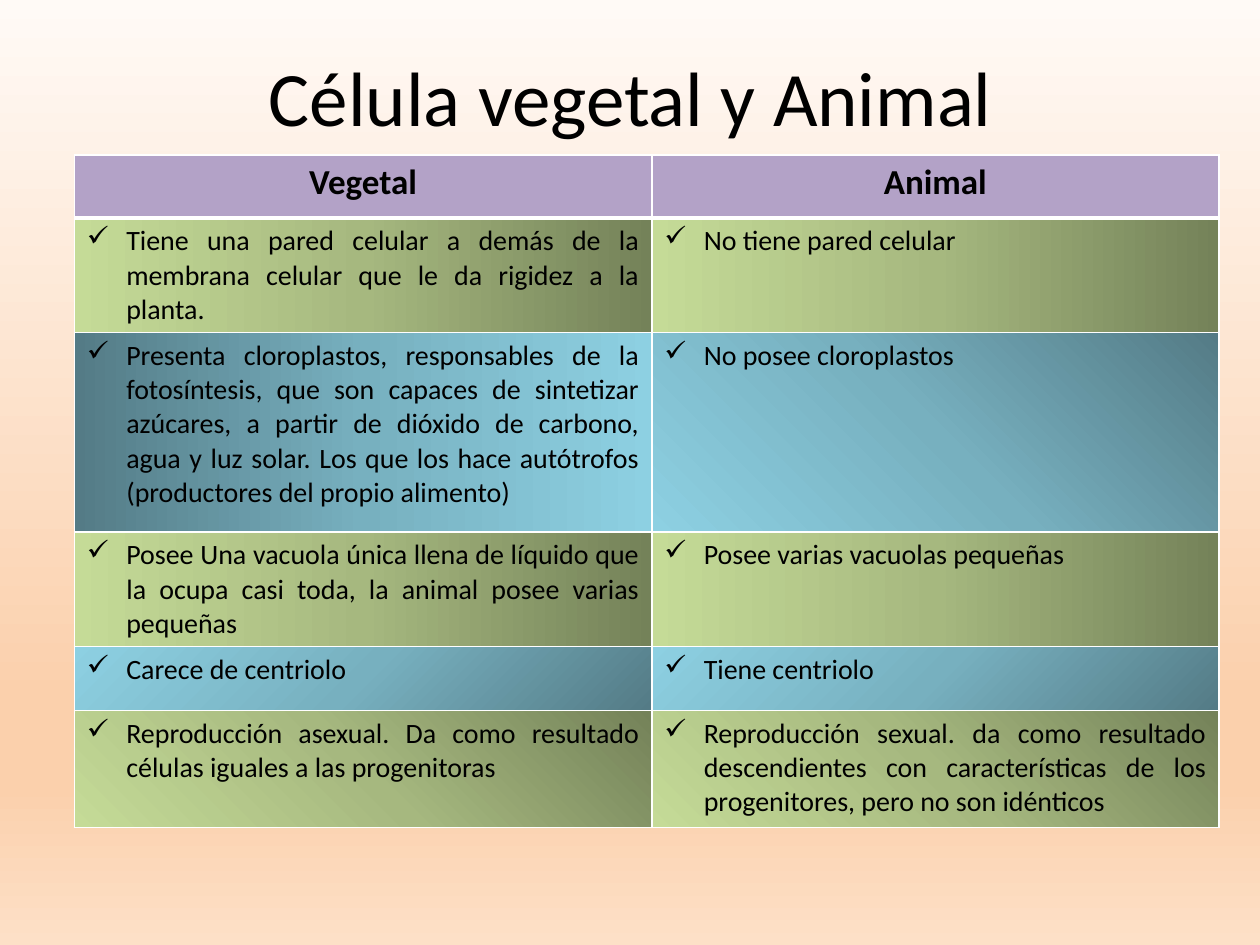
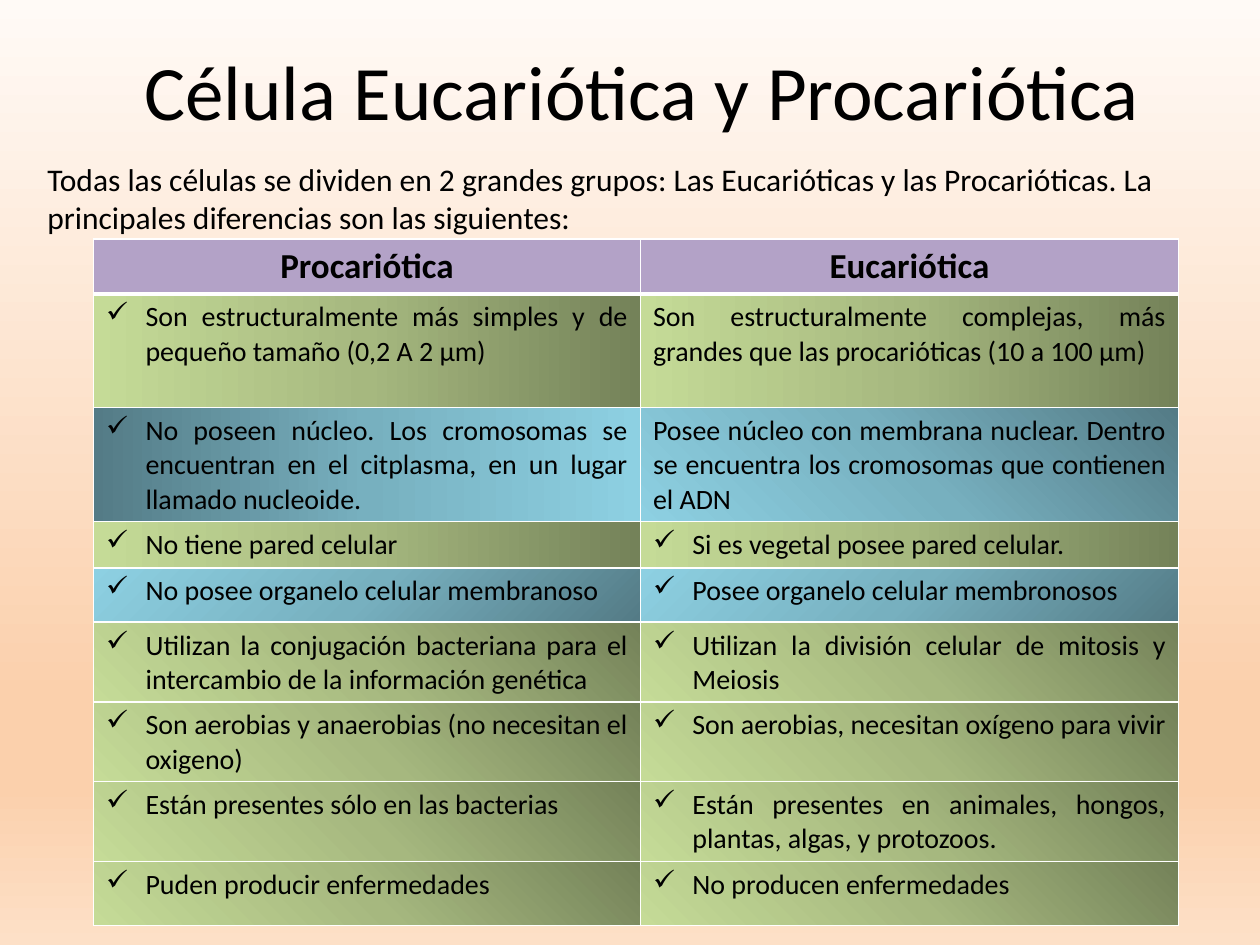
from lxml import etree
from pptx import Presentation
from pptx.dml.color import RGBColor
from pptx.enum.text import MSO_ANCHOR, PP_ALIGN
from pptx.oxml.ns import nsdecls, qn
from pptx.util import Pt

CENTER, JUSTIFY, LEFT = PP_ALIGN.CENTER, PP_ALIGN.JUSTIFY, PP_ALIGN.LEFT
TOP, MIDDLE = MSO_ANCHOR.TOP, MSO_ANCHOR.MIDDLE

BLACK = RGBColor(0x00, 0x00, 0x00)
WHITE = RGBColor(0xFF, 0xFF, 0xFF)
LILAC = RGBColor(0xB3, 0xA2, 0xC7)
CREAM = RGBColor(0xFF, 0xFA, 0xF6)
PEACH = RGBColor(0xFB, 0xD0, 0xAC)
SAND = RGBColor(0xFD, 0xE0, 0xC7)
GREENS = [(0, RGBColor(0x74, 0x82, 0x59)), (50, RGBColor(0xA6, 0xB8, 0x7F)),
          (100, RGBColor(0xC5, 0xDB, 0x97))]
BLUES = [(0, RGBColor(0x54, 0x7B, 0x86)), (50, RGBColor(0x77, 0xB0, 0xBF)),
         (100, RGBColor(0x8D, 0xD0, 0xE2))]
BACK = [(0, CREAM), (74, PEACH), (83, PEACH), (100, SAND)]

# A shade is its stops and either an angle or the corner the circle starts from.
GREEN = (GREENS, 180)
GREEN_ARC = (GREENS, "lb")
BLUE = (BLUES, 0)
BLUE_SLANT = (BLUES, 135)
BLUE_ARC = (BLUES, "lt")

TITLE = {"size": Pt(44), "bold": False}
INTRO = {"size": Pt(18), "bold": False}
HEAD = {"size": Pt(20), "bold": True}
BODY = {"size": Pt(16), "bold": False}
MARK = "✓"
INDENT = Pt(22.5)

# Each row: height, shade of each cell, text of each cell.
SLIDES = [
    {
        "title": ("Célula vegetal y Animal", (36.5, 9.5, 648, 90)),
        "table": (42.5, 88.5),
        "cols": (330, 324),
        "head": (36, ("Vegetal", "Animal")),
        "rows": [
            (65.5, (GREEN, GREEN), (
                "✓Tiene una pared celular a demás de la membrana celular "
                "que le da rigidez a la planta.",
                "✓No tiene pared celular")),
            (114, (BLUE, BLUE_SLANT), (
                "✓Presenta cloroplastos, responsables de la fotosíntesis, "
                "que son capaces de sintetizar azúcares, a partir de dióxido "
                "de carbono, agua y luz solar. Los que los hace autótrofos "
                "(productores del propio alimento)",
                "✓No posee cloroplastos")),
            (65.5, (GREEN, GREEN), (
                "✓Posee Una vacuola única llena de líquido que la ocupa casi "
                "toda, la animal posee varias pequeñas",
                "✓Posee varias vacuolas pequeñas")),
            (36.5, (BLUE_ARC, BLUE_ARC), (
                "✓Carece de centriolo",
                "✓Tiene centriolo")),
            (67, (GREEN_ARC, GREEN_ARC), (
                "✓Reproducción asexual. Da como resultado células iguales a "
                "las progenitoras",
                "✓Reproducción sexual. da como resultado descendientes con "
                "características de los progenitores, pero no son idénticos")),
        ],
    },
    {
        "title": ("Célula Eucariótica y Procariótica", (61, 15, 612, 73)),
        "intro": ("Todas las células se dividen en 2 grandes grupos: Las "
                  "Eucarióticas y las Procarióticas. La principales "
                  "diferencias son las siguientes:", (20, 88, 695, 51)),
        "table": (53.5, 136.5),
        "cols": (312.5, 307.5),
        "head": (31.5, ("Procariótica", "Eucariótica")),
        "rows": [
            (65, (GREEN, GREEN), (
                "✓Son estructuralmente más simples y de pequeño tamaño "
                "(0,2 A 2 µm)",
                "Son estructuralmente complejas, más grandes que las "
                "procarióticas (10 a 100 µm)")),
            (65, (BLUE, BLUE_SLANT), (
                "✓No poseen núcleo. Los cromosomas se encuentran en el "
                "citplasma, en un lugar llamado nucleoide.",
                "Posee núcleo con membrana nuclear. Dentro se encuentra los "
                "cromosomas que contienen el ADN")),
            (26.5, (GREEN, GREEN), (
                "✓No tiene pared celular",
                "✓Si es vegetal posee pared celular.")),
            (31, (BLUE_ARC, BLUE_ARC), (
                "✓No posee organelo celular membranoso",
                "✓Posee organelo celular membronosos")),
            (45.5, (GREEN_ARC, GREEN_ARC), (
                "✓Utilizan la conjugación bacteriana para el intercambio de "
                "la información genética",
                "✓Utilizan la división celular de mitosis y Meiosis")),
            (45.5, (GREEN_ARC, GREEN_ARC), (
                "✓Son aerobias y anaerobias (no necesitan el oxigeno)",
                "✓Son aerobias, necesitan oxígeno para vivir")),
            (45.5, (GREEN_ARC, GREEN_ARC), (
                "✓Están presentes sólo en las bacterias",
                "✓Están presentes en animales, hongos, plantas, algas, y "
                "protozoos.")),
            (36.5, (GREEN_ARC, GREEN_ARC), (
                "✓Puden producir enfermedades",
                "✓No producen enfermedades")),
        ],
    },
]


def make_shade(stops, way):
    """Return a gradFill element; way is an angle or the sides set to 100 %."""
    marks = "".join(f'<a:gs pos="{pos * 1000}"><a:srgbClr val="{color}"/></a:gs>'
                    for pos, color in stops)
    if isinstance(way, str):
        sides = " ".join(f'{side}="100000"' for side in way)
        course = f'<a:path path="circle"><a:fillToRect {sides}/></a:path>'
    else:
        course = f'<a:lin ang="{way * 60000}" scaled="0"/>'
    return etree.fromstring(f'<a:gradFill {nsdecls("a")} rotWithShape="1">'
                            f'<a:gsLst>{marks}</a:gsLst>{course}</a:gradFill>')


def write(frame, text, style, align):
    para = frame.paragraphs[0]
    para.alignment = align
    if text.startswith(MARK):
        props = para._p.get_or_add_pPr()
        props.set("marL", str(INDENT))
        props.set("indent", str(-INDENT))
        etree.SubElement(props, qn("a:buChar")).set("char", MARK)
    run = para.add_run()
    run.text = text.removeprefix(MARK)
    run.font.name = "Calibri"
    run.font.color.rgb = BLACK
    for name, value in style.items():
        setattr(run.font, name, value)


def add_text(slide, text, box, style, align, anchor):
    frame = slide.shapes.add_textbox(*map(Pt, box)).text_frame
    frame.word_wrap = True
    frame.vertical_anchor = anchor
    write(frame, text, style, align)


def add_edges(cell, base):
    """Draw white borders; base is the width of the bottom one."""
    props = cell._tc.get_or_add_tcPr()
    for side, width in zip("LRTB", (1, 1, 1, base)):
        props.append(etree.fromstring(
            f'<a:ln{side} {nsdecls("a")} w="{Pt(width)}"><a:solidFill>'
            f'<a:srgbClr val="{WHITE}"/></a:solidFill></a:ln{side}>'))
    return props


def add_grid(slide, data):
    tall, heads = data["head"]
    rows = data["rows"]
    highs = [tall] + [row[0] for row in rows]
    box = (*data["table"], sum(data["cols"]), sum(highs))
    grid = slide.shapes.add_table(len(highs), len(heads), *map(Pt, box)).table
    grid.horz_banding = False
    for col, width in zip(grid.columns, data["cols"]):
        col.width = Pt(width)
    for row, high in zip(grid.rows, highs):
        row.height = Pt(high)
    for c, text in enumerate(heads):
        cell = grid.cell(0, c)
        write(cell.text_frame, text, HEAD, CENTER)
        add_edges(cell, 3)
        cell.fill.solid()
        cell.fill.fore_color.rgb = LILAC
    for r, (_, shades, texts) in enumerate(rows, 1):
        for c, (shade, text) in enumerate(zip(shades, texts)):
            cell = grid.cell(r, c)
            write(cell.text_frame, text, BODY, JUSTIFY)
            add_edges(cell, 1).append(make_shade(*shade))


def main():
    deck = Presentation()
    deck.slide_width, deck.slide_height = Pt(720), Pt(540)
    master = deck.slide_master
    master.background.fill.gradient()
    plain = master._element.find(".//" + qn("a:gradFill"))
    plain.getparent().replace(plain, make_shade(BACK, 90))
    for data in SLIDES:
        slide = deck.slides.add_slide(deck.slide_layouts[6])
        add_text(slide, *data["title"], TITLE, CENTER, MIDDLE)
        if "intro" in data:
            add_text(slide, *data["intro"], INTRO, LEFT, TOP)
        add_grid(slide, data)
    deck.save("out.pptx")


if __name__ == "__main__":
    main()
